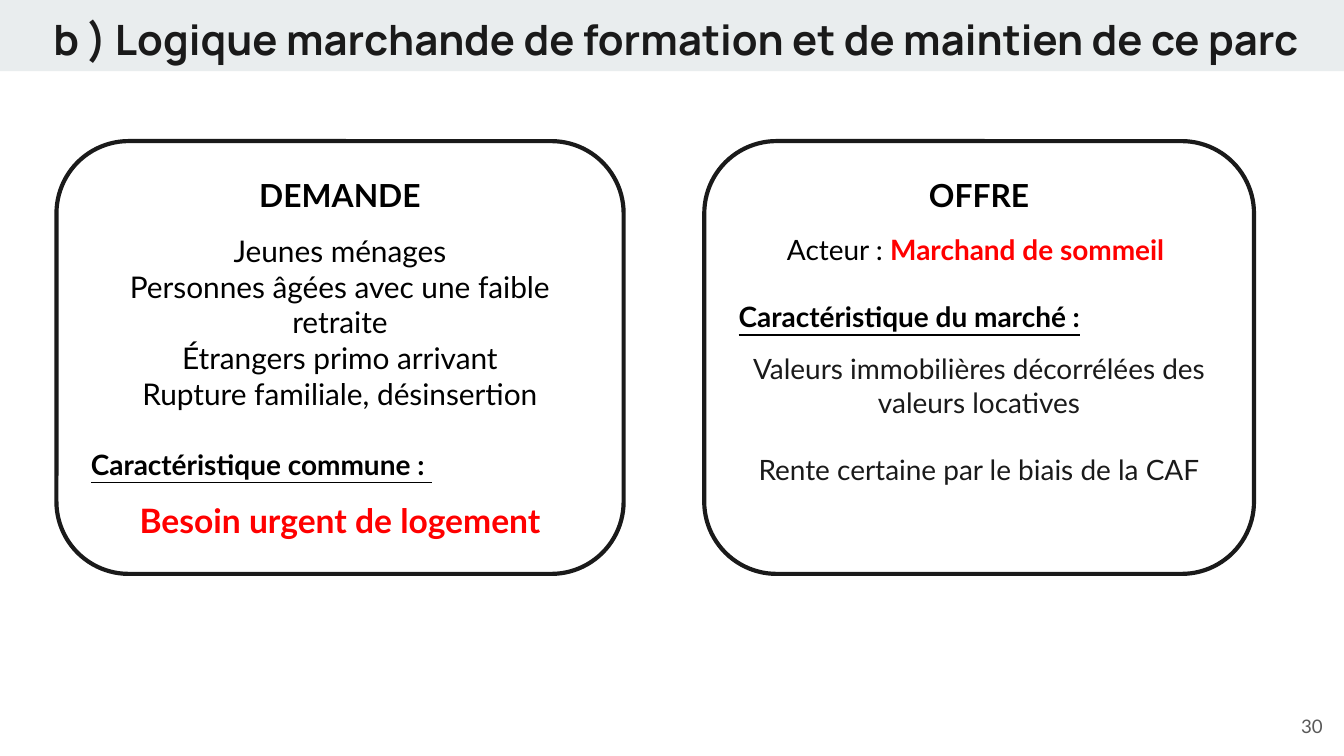
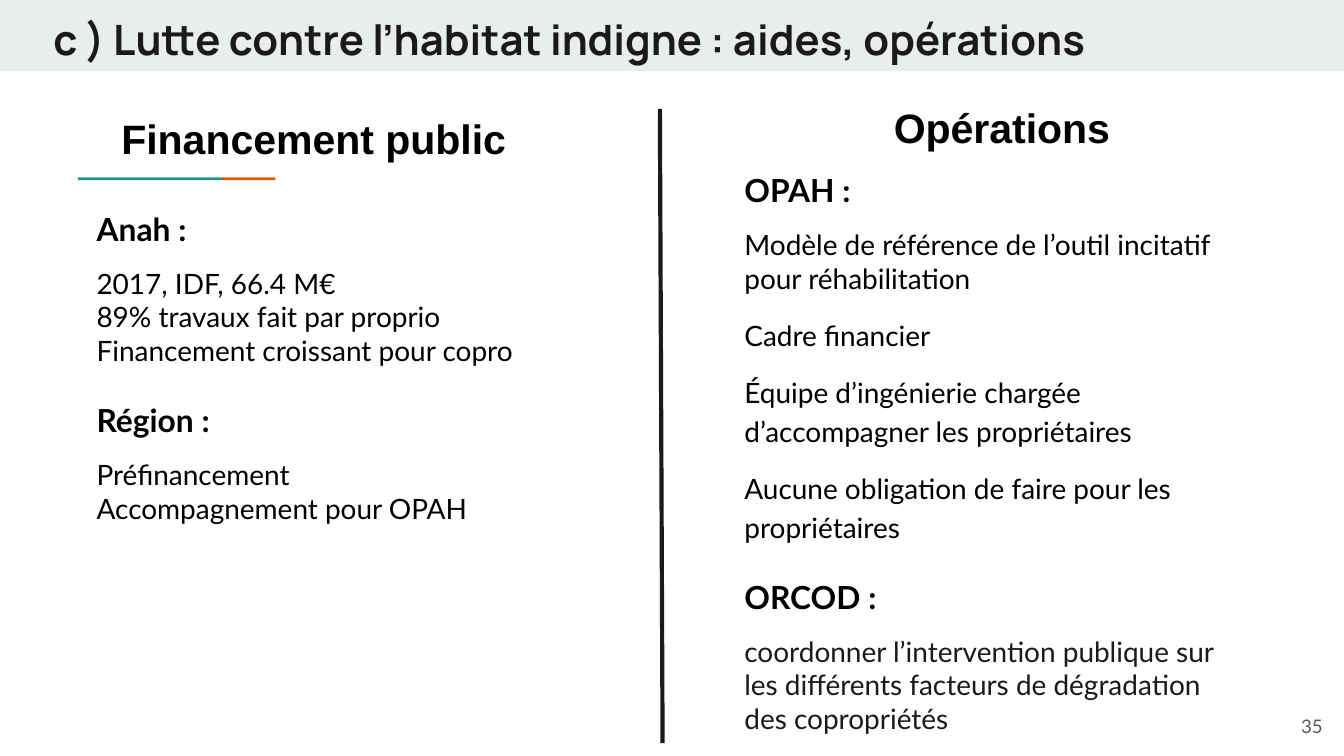
from dataclasses import dataclass

from lxml import etree
from pptx import Presentation
from pptx.dml.color import RGBColor
from pptx.enum.shapes import MSO_CONNECTOR, MSO_SHAPE
from pptx.enum.text import MSO_ANCHOR, MSO_AUTO_SIZE, PP_ALIGN
from pptx.oxml.ns import qn
from pptx.util import Inches, Pt

LEFT, CENTER, RIGHT = PP_ALIGN.LEFT, PP_ALIGN.CENTER, PP_ALIGN.RIGHT
TOP, MIDDLE = MSO_ANCHOR.TOP, MSO_ANCHOR.MIDDLE
FIT_SHAPE = MSO_AUTO_SIZE.SHAPE_TO_FIT_TEXT
RECTANGLE, ROUNDED = MSO_SHAPE.RECTANGLE, MSO_SHAPE.ROUNDED_RECTANGLE
STRAIGHT = MSO_CONNECTOR.STRAIGHT

BLACK, INK, WHITE, RED = "000000", "1A1A1A", "FFFFFF", "FF0000"
BAND, GREY, TEAL, ORANGE = "E9EDEE", "595959", "1A9988", "EB5600"


@dataclass
class Line:
    text: str
    size: float = 15
    bold: bool = False
    color: str = BLACK
    font: str = "Lato"
    align: int = LEFT
    before: float = 0
    spacing: float = 1.0
    underline: bool = False
    emphasis: str = ""


def rgb(value):
    return RGBColor.from_string(value)


def write(shape, lines, anchor=TOP):
    frame = shape.text_frame
    frame.word_wrap = True
    frame.vertical_anchor = anchor
    frame.margin_left = frame.margin_right = Inches(0.1)
    frame.margin_top = frame.margin_bottom = Inches(0.1)
    for index, line in enumerate(lines):
        paragraph = frame.add_paragraph() if index else frame.paragraphs[0]
        paragraph.alignment = line.align
        paragraph.space_before = Pt(line.before)
        paragraph.line_spacing = line.spacing
        font = paragraph.font
        font.name, font.size = line.font, Pt(line.size)
        font.bold, font.underline = line.bold, line.underline
        font.color.rgb = rgb(line.color)
        paragraph.add_run().text = line.text
        if line.emphasis:
            run = paragraph.add_run()
            run.text = line.emphasis
            run.font.bold = True
            run.font.color.rgb = rgb(RED)


def add_text(slide, box, lines, anchor=TOP):
    shape = slide.shapes.add_textbox(*map(Inches, box))
    write(shape, lines, anchor)
    return shape


def add_box(slide, kind, box, fill, line=None, width=0.75):
    shape = slide.shapes.add_shape(kind, *map(Inches, box))
    shape.shadow.inherit = False
    shape.fill.solid()
    shape.fill.fore_color.rgb = rgb(fill)
    if line:
        shape.line.color.rgb = rgb(line)
        shape.line.width = Pt(width)
    else:
        shape.line.fill.background()
    return shape


def add_base(presentation, title, number):
    slide = presentation.slides.add_slide(presentation.slide_layouts[6])
    add_box(slide, RECTANGLE, (0, 0, 10, 0.53), BAND)
    add_text(slide, (0.3, 0, 9.63, 0.59), [Line(title, 22.4, True, INK, "Manrope")])
    add_text(slide, (9.34, 5.19, 0.6, 0.43),
             [Line(number, 10, color=GREY, align=RIGHT)], MIDDLE)
    return slide


def add_market_card(slide, box, lines):
    card = add_box(slide, ROUNDED, box, WHITE, INK, 2.25)
    card.adjustments[0] = 0.167
    write(card, lines)


def add_column_heading(slide, box, text):
    heading = add_box(slide, RECTANGLE, box, WHITE, WHITE)
    write(heading, [Line(text, 22, True, font="Arial", align=CENTER)], MIDDLE)


def add_accent(slide, box):
    left, top, width, height = box
    teal_width = width * 0.73
    add_box(slide, RECTANGLE, (left, top, teal_width, height), TEAL)
    add_box(slide, RECTANGLE, (left + teal_width, top, width - teal_width, height), ORANGE)


def add_divider(slide, start, end):
    divider = slide.shapes.add_connector(STRAIGHT, *map(Inches, start + end))
    divider.line.color.rgb = rgb(INK)
    divider.line.width = Pt(2.25)
    properties = divider._element.find(qn("p:spPr"))
    etree.SubElement(properties, qn("a:effectLst"))


def add_column_text(slide, box, lines):
    add_text(slide, box, lines).text_frame.auto_size = FIT_SHAPE


def build_market(presentation):
    slide = add_base(presentation,
                     "b ) Logique marchande de formation et de maintien de ce parc", "30")
    add_market_card(slide, (0.42, 1.05, 4.22, 3.22), [
        Line("DEMANDE", 17, True, align=CENTER),
        Line("Jeunes ménages", 16, align=CENTER, before=10),
        Line("Personnes âgées avec une faible retraite", 16, align=CENTER),
        Line("Étrangers primo arrivant", 16, align=CENTER),
        Line("Rupture familiale, désinsertion", 16, align=CENTER),
        Line("Caractéristique commune : ", bold=True, before=19.2, underline=True),
        Line("Besoin urgent de logement", 18, True, RED, align=CENTER, before=10),
    ])
    add_market_card(slide, (5.24, 1.05, 4.09, 3.22), [
        Line("OFFRE", 17, True, align=CENTER),
        Line("Acteur : ", align=CENTER, before=10, emphasis="Marchand de sommeil "),
        Line("Caractéristique du marché :", bold=True, before=18, underline=True),
        Line("Valeurs immobilières décorrélées des valeurs locatives",
             color=INK, align=CENTER, before=10),
        Line("Rente certaine par le biais de la CAF", color=INK, align=CENTER, before=18),
    ])


def build_support(presentation):
    slide = add_base(presentation,
                     "c ) Lutte contre l’habitat indigne : aides, opérations", "35")
    add_divider(slide, (4.91, 0.81), (4.93, 5.53))
    add_column_heading(slide, (0.71, 0.73, 3.25, 0.59), "Financement public")
    add_column_heading(slide, (5.83, 0.65, 3.25, 0.59), "Opérations")
    add_accent(slide, (0.58, 1.32, 1.47, 0.02))
    add_column_text(slide, (0.62, 1.46, 3.75, 2.82), [
        Line("Anah :", 17, True),
        Line("2017, IDF, 66.4 M€", before=10),
        Line("89% travaux fait par proprio"),
        Line("Financement croissant pour copro"),
        Line("Région :", 17, True, before=18),
        Line("Préfinancement", before=10),
        Line("Accompagnement pour OPAH"),
    ])
    add_column_text(slide, (5.44, 1.17, 3.89, 4.7), [
        Line("OPAH :", 17, True),
        Line("Modèle de référence de l’outil incitatif pour réhabilitation", before=10),
        Line("Cadre financier", before=10, spacing=1.15),
        Line("Équipe d’ingénierie chargée d’accompagner les propriétaires",
             before=10, spacing=1.15),
        Line("Aucune obligation de faire pour les propriétaires", before=10, spacing=1.15),
        Line("ORCOD :", 17, True, before=18),
        Line("coordonner l’intervention publique sur les différents facteurs "
             "de dégradation des copropriétés", color=INK, before=10),
    ])


def main():
    presentation = Presentation()
    presentation.slide_width = Inches(10)
    presentation.slide_height = Inches(10 * 9 / 16)
    build_market(presentation)
    build_support(presentation)
    presentation.save("out.pptx")


if __name__ == "__main__":
    main()
